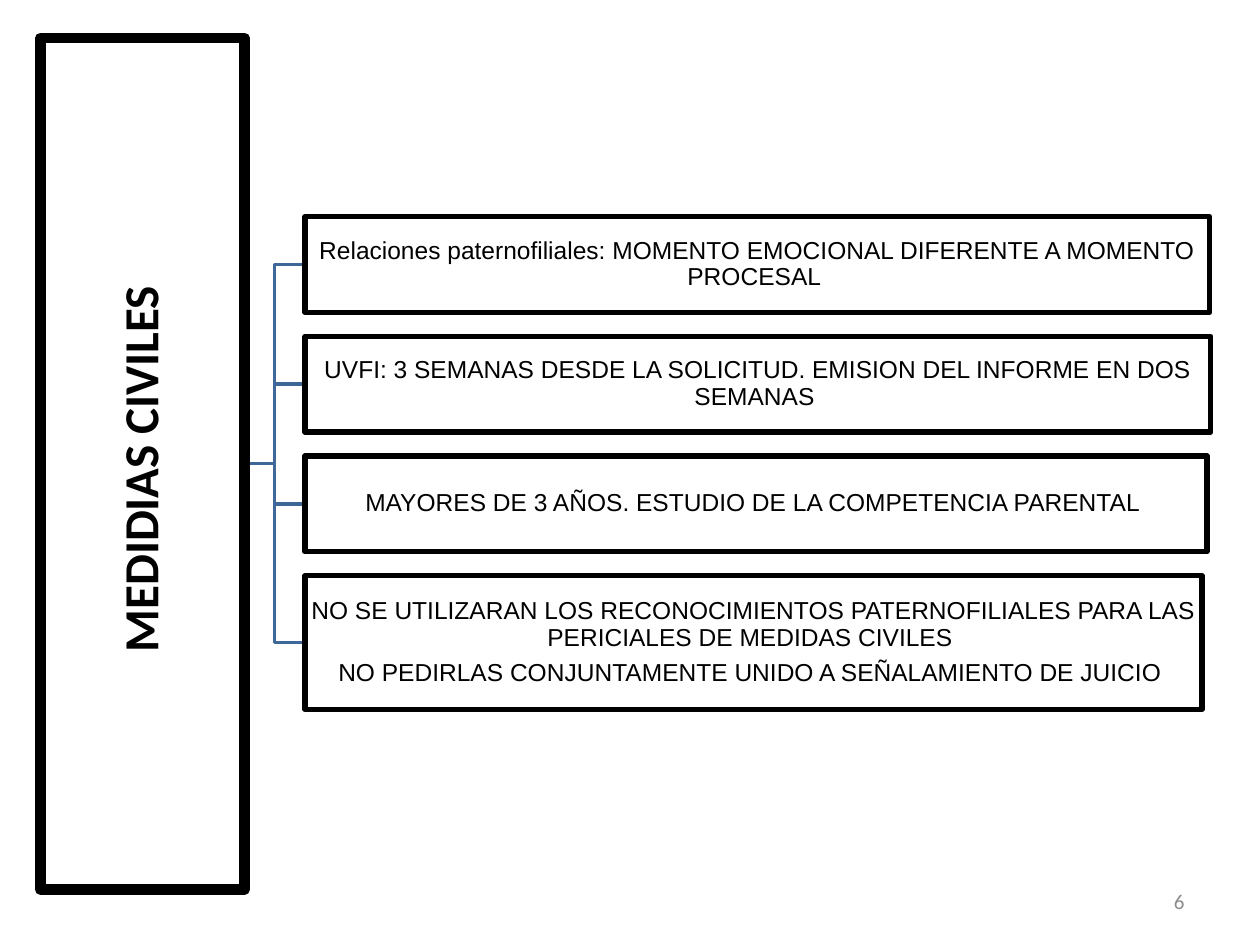
import pptx
import pptx.dml.color
import pptx.enum.shapes
import pptx.enum.text
import pptx.util

Inches = pptx.util.Inches
Pt = pptx.util.Pt
RGBColor = pptx.dml.color.RGBColor
ALIGN = pptx.enum.text.PP_ALIGN
MIDDLE = pptx.enum.text.MSO_ANCHOR.MIDDLE

BLACK = RGBColor(0x00, 0x00, 0x00)
BLUE = RGBColor(0x3F, 0x67, 0x97)
GRAY = RGBColor(0x8C, 0x8C, 0x8C)

ROOT_RIGHT = 1.94
ROOT_MIDDLE = 3.68
ROOT_LENGTH = 6.76
ROOT_THICKNESS = 1.62
MEASURES_LEFT = 2.42
MEASURES_TOP = 1.72
MEASURES_GAP = 0.19

# Width, height and paragraphs of each measure
MEASURES = [
    (7.18, 0.76, ["Relaciones paternofiliales: MOMENTO EMOCIONAL DIFERENTE A MOMENTO PROCESAL "]),
    (7.19, 0.76, ["UVFI: 3 SEMANAS DESDE LA SOLICITUD. EMISION DEL INFORME EN DOS SEMANAS "]),
    (7.16, 0.76, ["MAYORES DE 3 AÑOS. ESTUDIO DE LA COMPETENCIA PARENTAL "]),
    (7.12, 1.06, ["NO SE UTILIZARAN LOS RECONOCIMIENTOS PATERNOFILIALES PARA LAS "
                  "PERICIALES DE MEDIDAS CIVILES ",
                  "NO PEDIRLAS CONJUNTAMENTE UNIDO A SEÑALAMIENTO DE JUICIO "]),
]


class Diagram:
    def __init__(self, slide):
        self.slide = slide
        self.box_font = "Arial"
        self.title_font = "Calibri"

    def set_text(self, frame, paragraphs, font, size, color, align, bold=False):
        frame.word_wrap = True
        frame.vertical_anchor = MIDDLE
        for index, text in enumerate(paragraphs):
            paragraph = frame.add_paragraph() if index else frame.paragraphs[0]
            paragraph.text = text
            paragraph.alignment = align
            paragraph.font.name = font
            paragraph.font.size = Pt(size)
            paragraph.font.bold = bold
            paragraph.font.color.rgb = color

    def box(self, left, top, width, height, paragraphs, font, size, border, inset, bold=False):
        rectangle = self.slide.shapes.add_shape(
            pptx.enum.shapes.MSO_SHAPE.RECTANGLE,
            Inches(left), Inches(top), Inches(width), Inches(height))
        rectangle.shadow.inherit = False
        rectangle.fill.background()
        rectangle.line.color.rgb = BLACK
        rectangle.line.width = Pt(border)
        frame = rectangle.text_frame
        frame.margin_left = frame.margin_right = Inches(inset)
        frame.margin_top = frame.margin_bottom = Inches(inset)
        self.set_text(frame, paragraphs, font, size, BLACK, ALIGN.CENTER, bold)
        for paragraph in frame.paragraphs:
            paragraph.line_spacing = 0.9
            paragraph.space_after = Pt(round(size * 0.35))
        return rectangle

    def root(self, text):
        """Add the vertical title, a wide box turned a quarter to the left."""
        left = ROOT_RIGHT - (ROOT_THICKNESS + ROOT_LENGTH) / 2
        top = ROOT_MIDDLE - ROOT_THICKNESS / 2
        title = self.box(left, top, ROOT_LENGTH, ROOT_THICKNESS, [text],
                         self.title_font, 28, 6, 0.02, bold=True)
        title.rotation = 270

    def measure(self, top, width, height, paragraphs):
        self.box(MEASURES_LEFT, top, width, height, paragraphs, self.box_font, 14, 3, 0.01)

    def branch(self, middle):
        """Add the elbow from the root to a measure centred at middle."""
        bend = Inches((ROOT_RIGHT + MEASURES_LEFT) / 2)
        start, end = Inches(ROOT_MIDDLE), Inches(middle)
        builder = self.slide.shapes.build_freeform(Inches(ROOT_RIGHT), start)
        builder.add_line_segments(
            [(bend, start), (bend, end), (Inches(MEASURES_LEFT), end)], close=False)
        elbow = builder.convert_to_shape()
        elbow.shadow.inherit = False
        elbow.fill.background()
        elbow.line.color.rgb = BLUE
        elbow.line.width = Pt(2)

    def page_number(self, number):
        box = self.slide.shapes.add_textbox(Inches(7.17), Inches(6.95), Inches(2.33), Inches(0.4))
        self.set_text(box.text_frame, [number], self.title_font, 12, GRAY, ALIGN.RIGHT)


def main():
    presentation = pptx.Presentation()
    presentation.slide_width = Inches(10)
    presentation.slide_height = Inches(7.5)
    diagram = Diagram(presentation.slides.add_slide(presentation.slide_layouts[6]))

    diagram.page_number("6")
    tops = [MEASURES_TOP]
    for _, height, _ in MEASURES[:-1]:
        tops.append(tops[-1] + height + MEASURES_GAP)
    for top, (_, height, _) in zip(tops, MEASURES):
        diagram.branch(top + height / 2)
    diagram.root("MEDIDIAS CIVILES ")
    for top, (width, height, paragraphs) in zip(tops, MEASURES):
        diagram.measure(top, width, height, paragraphs)

    presentation.save("out.pptx")


if __name__ == "__main__":
    main()
